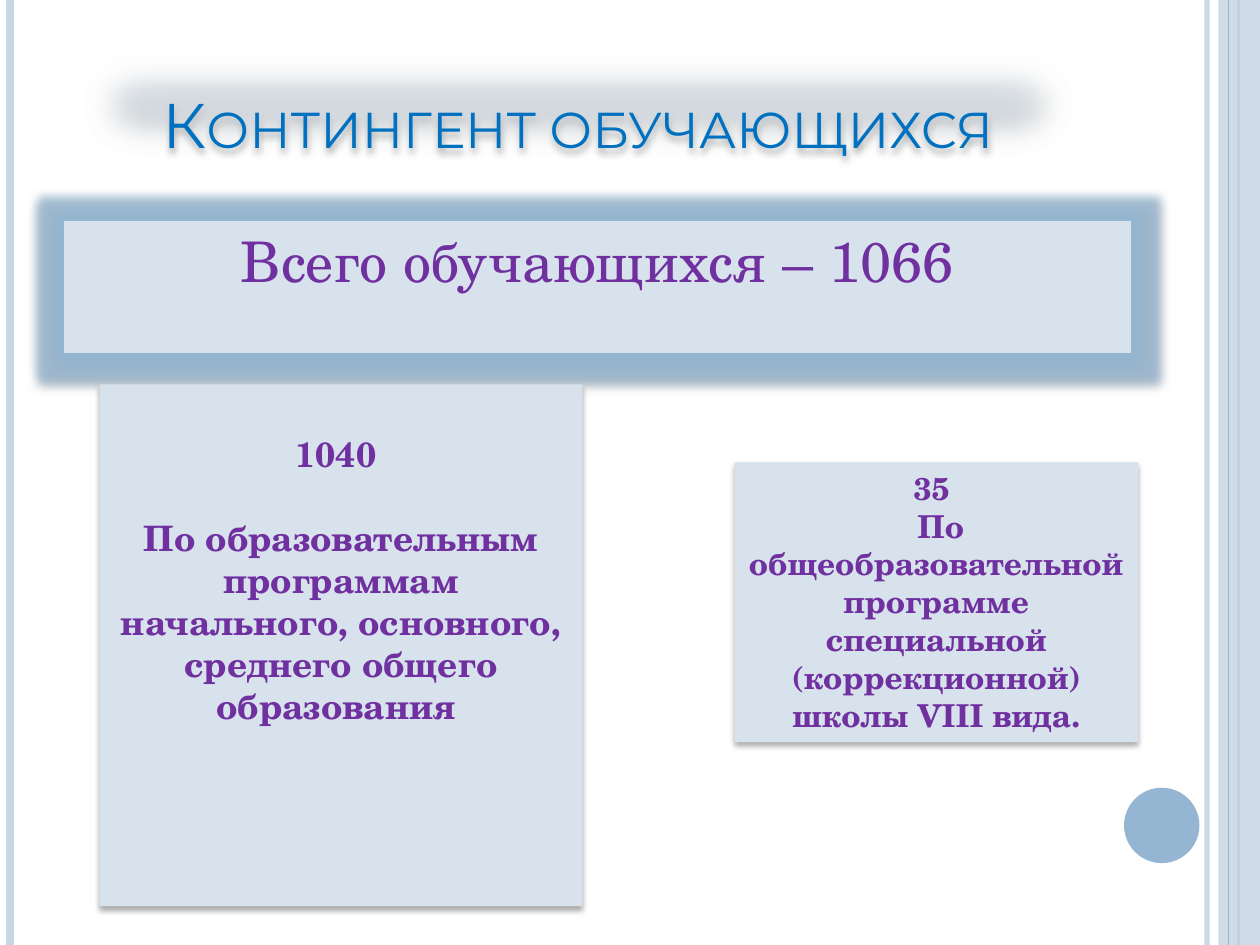
from lxml.etree import SubElement
from pptx import Presentation
from pptx.dml.color import RGBColor
from pptx.enum.shapes import MSO_CONNECTOR, MSO_SHAPE
from pptx.enum.text import MSO_ANCHOR, PP_ALIGN
from pptx.oxml.ns import qn
from pptx.util import Cm, Pt

PALE = RGBColor(0xC8, 0xD7, 0xE5)
STEEL = RGBColor(0x94, 0xB6, 0xD2)
PANEL = RGBColor(0xD7, 0xE2, 0xEC)
BLUE = RGBColor(0x00, 0x70, 0xC0)
PURPLE = RGBColor(0x70, 0x30, 0xA0)
BLACK = RGBColor(0, 0, 0)
SANS = "Montserrat"
SERIF = "TeX Gyre Schola"


def fade(fill, alpha):
    """Set the opacity of a solid fill element in percent."""
    SubElement(fill[0], qn("a:alpha"), val=str(alpha * 1000))


def effect(shape, tag, color=None, alpha=100, **sizes):
    """Add one effect, with its sizes, to a shape."""
    group = shape._element.spPr.find(qn("a:effectLst"))
    node = SubElement(group, qn("a:" + tag), {k: str(int(v)) for k, v in sizes.items()})
    if color is not None:
        tint = SubElement(node, qn("a:srgbClr"), val=str(color))
        SubElement(tint, qn("a:alpha"), val=str(alpha * 1000))


def shadow(shape, alpha, blur, dist):
    """Drop a soft black shadow straight down."""
    effect(shape, "outerShdw", BLACK, alpha, blurRad=Pt(blur), dist=Pt(dist), dir=5400000)


def block(slide, kind, box, color, edge=None):
    """Draw a flat filled shape in a box given in centimetres."""
    shape = slide.shapes.add_shape(kind, *map(Cm, box))
    shape.shadow.inherit = False
    shape.fill.solid()
    shape.fill.fore_color.rgb = color
    if edge is None:
        shape.line.fill.background()
    else:
        shape.line.color.rgb = edge
        shape.line.width = Pt(0.75)
    return shape


def rule(slide, x, top, height, color, width):
    """Draw a vertical line."""
    line = slide.shapes.add_connector(
        MSO_CONNECTOR.STRAIGHT, Cm(x), Cm(top), Cm(x), Cm(top + height))
    line.line.color.rgb = color
    line.line.width = Pt(width)
    SubElement(line._element.spPr, qn("a:effectLst"))
    return line


def frame(slide, box):
    """Draw the side rules, the right band and the disc."""
    left, top, width, height = box
    right = left + width
    inner = rule(slide, right - 1.07, top, height, PALE, 3)
    fade(inner.line._ln.find(qn("a:solidFill")), 93)
    rule(slide, left + 0.2, top, height, PALE, 4.5)
    rule(slide, right - 0.43, top, height, STEEL, 1.5)
    band = block(slide, MSO_SHAPE.RECTANGLE, (right - 0.84, top, 0.84, height), PALE)
    fade(band._element.spPr.find(qn("a:solidFill")), 87)
    rule(slide, right - 0.63, top, height, STEEL, 0.75)
    block(slide, MSO_SHAPE.OVAL, (right - 2.74, top + 15.88, 1.52, 1.52), STEEL)


def write(shape, lines, size, color, font, bold=False, gap=0):
    """Fill a shape with centred paragraphs set from the top."""
    text = shape.text_frame
    text.word_wrap = True
    text.vertical_anchor = MSO_ANCHOR.TOP
    for i, line in enumerate(lines):
        para = text.add_paragraph() if i else text.paragraphs[0]
        para.alignment = PP_ALIGN.CENTER
        if i:
            para.space_before = Pt(gap)
        run = para.add_run()
        run.text = line
        run.font.size = Pt(size)
        run.font.name = font
        run.font.bold = bold
        run.font.color.rgb = color


def title(slide, box, words):
    """Draw the soft-edged title bar in small capitals."""
    bar = block(slide, MSO_SHAPE.RECTANGLE, box, PANEL, STEEL)
    shadow(bar, 35, 4, 2)
    effect(bar, "softEdge", rad=Pt(25))
    write(bar, [words], 36, BLUE, SANS)
    bar.text_frame.vertical_anchor = MSO_ANCHOR.BOTTOM
    bar.text_frame.paragraphs[0].runs[0].font._element.set("cap", "small")


def total(slide, box, words):
    """Draw the glowing bar with the overall number."""
    bar = block(slide, MSO_SHAPE.RECTANGLE, box, PANEL, STEEL)
    effect(bar, "glow", STEEL, 75, rad=Pt(11))
    shadow(bar, 35, 4, 2)
    write(bar, [words], 32, PURPLE, SERIF)
    bar.text_frame.paragraphs[0].space_before = Pt(6)


def card(slide, box, lines, size, inset=0.13, gap=0):
    """Draw a card with a number and its programme."""
    shape = block(slide, MSO_SHAPE.RECTANGLE, box, PANEL)
    shadow(shape, 32, 3.5, 2.2)
    write(shape, lines, size, PURPLE, SERIF, True, gap)
    shape.text_frame.margin_top = Cm(inset)


def main():
    """Build the slide and save it."""
    deck = Presentation()
    deck.slide_width, deck.slide_height = Cm(25.4), Cm(19.05)
    slide = deck.slides.add_slide(deck.slide_layouts[6])
    frame(slide, (0, 0, 25.4, 19.05))
    title(slide, (1.27, 0.76, 20.75, 2.62), "Контингент обучающихся")
    total(slide, (1.27, 4.45, 21.54, 2.69), "Всего обучающихся – 1066")
    card(slide, (2.01, 7.75, 9.73, 10.52), [
        "1040 ",
        "По образовательным программам начального, основного, "
        "среднего общего образования "], 20, 0.97, 24)
    card(slide, (14.81, 9.32, 8.13, 5.64), [
        "35 ",
        " По общеобразовательной программе специальной "
        "(коррекционной) школы VIII вида."], 18)
    deck.save("out.pptx")


if __name__ == "__main__":
    main()
